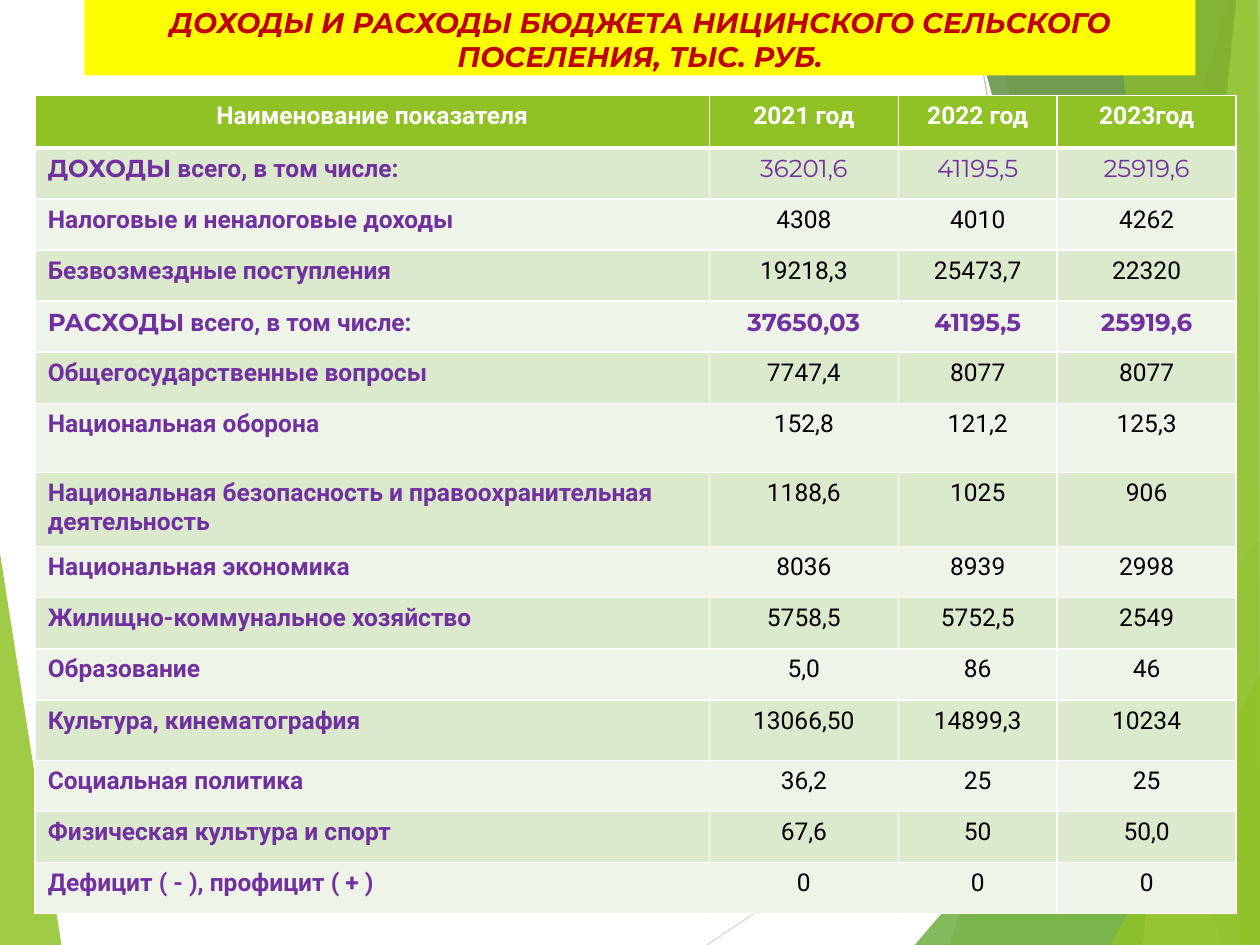
from lxml import etree
from pptx import Presentation
from pptx import util as u
from pptx.dml.color import RGBColor
from pptx.enum import shapes, text
from pptx.oxml import ns

PAGE = (0, 0, 25.4, 19.05)
PURPLE, BLACK, WHITE = "7030A0", "000000", "FFFFFF"
GREEN, PALE, PALER = "90C226", "DBE9CD", "EEF4E8"
COLUMNS = [13.59, 3.81, 3.2, 3.61]
ROW_HEIGHT = 1.03
ROW_HEIGHTS = {0: 1.05, 6: 1.4, 7: 1.49, 11: 1.22}
HEADER = ("", "Наименование показателя", "2021 год", "2022 год", "2023год")
ROWS = [
    ("ДОХОДЫ", " всего, в том числе:", "36201,6", "41195,5", "25919,6"),
    ("", "Налоговые и неналоговые доходы", "4308", "4010", "4262"),
    ("", "Безвозмездные поступления", "19218,3", "25473,7", "22320"),
    ("РАСХОДЫ", " всего, в том числе:", "37650,03", "41195,5", "25919,6"),
    ("", "Общегосударственные вопросы", "7747,4", "8077", "8077"),
    ("", "Национальная оборона", "152,8", "121,2", "125,3"),
    ("", "Национальная безопасность и правоохранительная деятельность",
     "1188,6", "1025", "906"),
    ("", "Национальная экономика", "8036", "8939", "2998"),
    ("", "Жилищно-коммунальное хозяйство", "5758,5", "5752,5", "2549"),
    ("", "Образование", "5,0", "86", "46"),
    ("", "Культура, кинематография", "13066,50", "14899,3", "10234"),
    ("", "Социальная политика", "36,2", "25", "25"),
    ("", "Физическая культура и спорт", "67,6", "50", "50,0"),
    ("", "Дефицит ( - ), профицит ( + )", "0", "0", "0"),
]
LEFT_FACET = ([(0, 11.15), (1.24, 19.05), (0, 19.05)], GREEN, 85)
RAYS = [((14.25, 19.05), (25.4, 11.6), "D9D9D9"),
        ((19.56, 0), (22.96, 19.05), "BFBFBF")]
RIGHT_FACETS = [
    ([(24.77, 0), (19.15, 19.05), (25.4, 19.05), (25.4, 0)], GREEN, 30),
    ([(20.02, 0), (23.34, 19.05), (25.4, 19.05), (25.4, 0)], GREEN, 20),
    ([(18.44, 19.05), (25.4, 10.9), (25.4, 19.05)], "54A021", 72),
    ([(19.48, 0), (24.64, 19.05), (25.4, 19.05), (25.4, 0)], "3F7819", 70),
    ([(24.92, 0), (23.04, 19.05), (25.4, 19.05), (25.4, 0)], "C0E474", 70),
    ([(22.43, 0), (25.04, 19.05), (25.4, 19.05), (25.35, 0)], GREEN, 65),
    ([(22.38, 19.05), (25.4, 13.59), (25.4, 19.05)], GREEN, 80),
]


def color(value):
    return RGBColor.from_string(value)


def add_span(para, words, size, font, fill, bold=True, italic=False):
    span = para.add_run()
    span.text = words
    span.font.size = u.Pt(size)
    span.font.name = font
    span.font.color.rgb = color(fill)
    span.font.bold = bold
    span.font.italic = italic


def add_facet(page, box, points, fill, opacity):
    corners = [(u.Cm(box[0] + x), u.Cm(box[1] + y)) for x, y in points]
    builder = page.shapes.build_freeform(*corners[0])
    builder.add_line_segments(corners[1:], close=True)
    facet = builder.convert_to_shape()
    facet.shadow.inherit = False
    facet.line.fill.background()
    facet.fill.solid()
    facet.fill.fore_color.rgb = color(fill)
    tint = facet.fill._xPr.find(".//" + ns.qn("a:srgbClr"))
    etree.SubElement(tint, ns.qn("a:alpha"), val=str(opacity * 1000))


def add_ray(page, box, start, end, stroke):
    ray = page.shapes.add_connector(
        shapes.MSO_CONNECTOR.STRAIGHT,
        u.Cm(box[0] + start[0]), u.Cm(box[1] + start[1]),
        u.Cm(box[0] + end[0]), u.Cm(box[1] + end[1]))
    ray.line.color.rgb = color(stroke)
    ray.line.width = u.Pt(0.75)
    etree.SubElement(ray._element.spPr, ns.qn("a:effectLst"))


def add_backdrop(page, box):
    add_facet(page, box, *LEFT_FACET)
    for ray in RAYS:
        add_ray(page, box, *ray)
    for facet in RIGHT_FACETS:
        add_facet(page, box, *facet)


def add_title(page, box):
    banner = page.shapes.add_shape(shapes.MSO_SHAPE.RECTANGLE, *map(u.Cm, box))
    banner.shadow.inherit = False
    banner.fill.solid()
    banner.fill.fore_color.rgb = color("FFFF00")
    banner.line.fill.background()
    frame = banner.text_frame
    frame.word_wrap = True
    frame.vertical_anchor = text.MSO_ANCHOR.TOP
    frame.margin_top = frame.margin_bottom = u.Cm(0.1)
    para = frame.paragraphs[0]
    para.alignment = text.PP_ALIGN.CENTER
    add_span(para, "ДОХОДЫ И РАСХОДЫ БЮДЖЕТА НИЦИНСКОГО СЕЛЬСКОГО ПОСЕЛЕНИЯ, ТЫС. РУБ.",
             16.2, "Montserrat", "C00000", italic=True)


def style_cell(cell, fill, top, bottom):
    properties = cell._tc.get_or_add_tcPr()
    for side, width in (("L", 1), ("R", 1), ("T", top), ("B", bottom)):
        edge = etree.SubElement(properties, ns.qn("a:ln" + side), w=str(u.Pt(width)))
        paint = etree.SubElement(edge, ns.qn("a:solidFill"))
        etree.SubElement(paint, ns.qn("a:srgbClr"), val=WHITE)
    cell.fill.solid()
    cell.fill.fore_color.rgb = color(fill)


def fill_row(table, index, record):
    total, label, *values = record
    header = index == 0
    fill = GREEN if header else (PALE if index % 2 else PALER)
    label_color = WHITE if header else PURPLE
    value_font = "Montserrat" if total else "Roboto"
    value_color = label_color if header or total else BLACK
    value_bold = header or total == "РАСХОДЫ"
    for column, words in enumerate([label] + values):
        cell = table.cell(index, column)
        style_cell(cell, fill, 3 if index == 1 else 1, 3 if header else 1)
        para = cell.text_frame.paragraphs[0]
        if header or column:
            para.alignment = text.PP_ALIGN.CENTER
        if column:
            add_span(para, words, 14, value_font, value_color, value_bold)
        else:
            if total:
                add_span(para, total, 14, "Montserrat", label_color)
            add_span(para, words, 14, "Roboto", label_color)


def add_budget_table(page, box):
    records = [HEADER] + ROWS
    table = page.shapes.add_table(len(records), len(COLUMNS), *map(u.Cm, box)).table
    for column, width in zip(table.columns, COLUMNS):
        column.width = u.Cm(width)
    for index, record in enumerate(records):
        table.rows[index].height = u.Cm(ROW_HEIGHTS.get(index, ROW_HEIGHT))
        fill_row(table, index, record)


def main():
    deck = Presentation()
    deck.slide_width, deck.slide_height = u.Cm(PAGE[2]), u.Cm(PAGE[3])
    page = deck.slides.add_slide(deck.slide_layouts[6])
    add_backdrop(page, PAGE)
    add_title(page, (1.7, 0, 22.4, 1.52))
    add_budget_table(page, (0.71, 1.93, 24.21, 16.49))
    deck.save("out.pptx")


if __name__ == "__main__":
    main()
